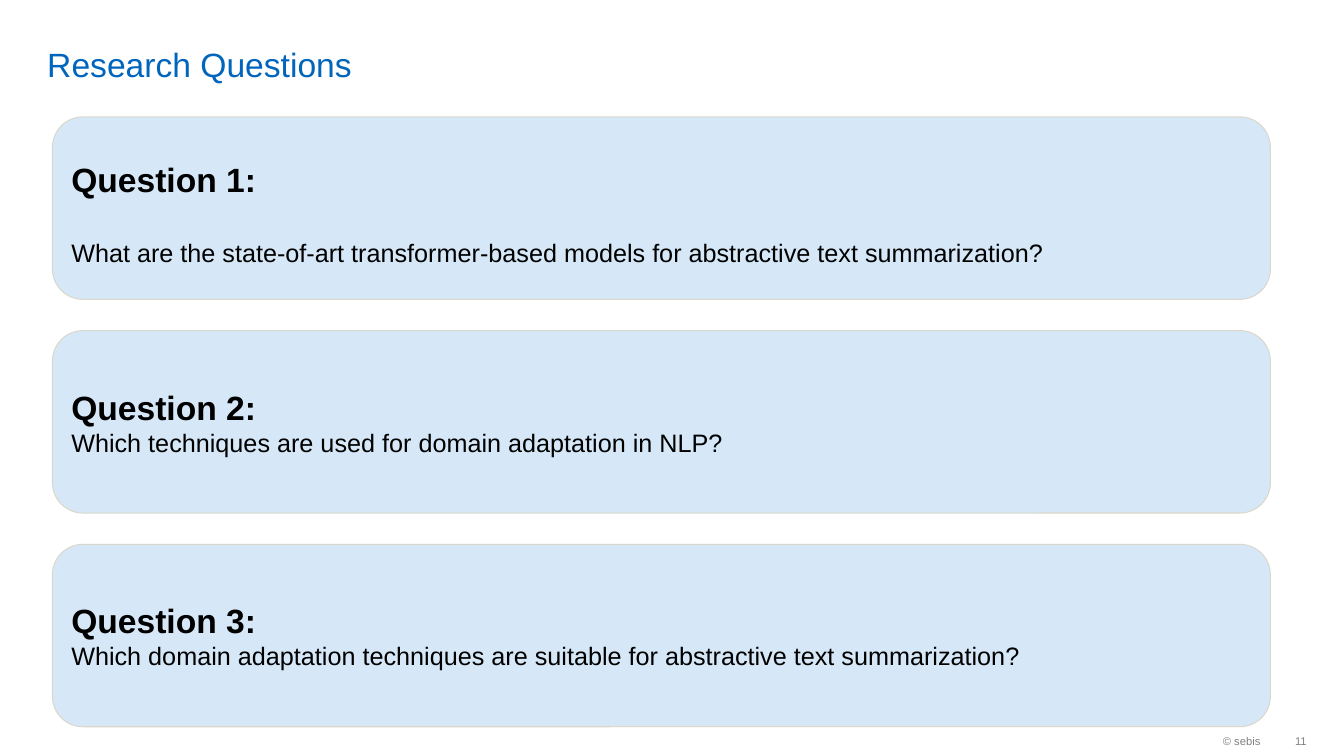
import pptx
import pptx.util
import pptx.dml.color
import pptx.enum.shapes
import pptx.enum.text

Inches = pptx.util.Inches
Pt = pptx.util.Pt
RGBColor = pptx.dml.color.RGBColor
Align = pptx.enum.text.PP_ALIGN
Anchor = pptx.enum.text.MSO_ANCHOR

BLUE = RGBColor(0x00, 0x65, 0xBD)
PALE = RGBColor(0xD6, 0xE8, 0xF7)
EDGE = RGBColor(0xDA, 0xD7, 0xCB)
BLACK = RGBColor(0, 0, 0)
GRAY = RGBColor(0x80, 0x80, 0x80)


def style(para, text, size, color, align=Align.LEFT, bold=False):
    para.text = text
    para.alignment = align
    para.font.name = "Arial"
    para.font.size = Pt(size)
    para.font.bold = bold
    para.font.color.rgb = color


def label(left, top, width, height, anchor):
    box = slide.shapes.add_textbox(
        Inches(left), Inches(top), Inches(width), Inches(height))
    frame = box.text_frame
    frame.word_wrap = True
    frame.vertical_anchor = anchor
    return frame


deck = pptx.Presentation()
deck.slide_width = Inches(13.33)
deck.slide_height = Inches(7.5)
slide = deck.slides.add_slide(deck.slide_layouts[6])

title = label(0.37, 0.05, 11.58, 0.79, Anchor.BOTTOM)
title.margin_top = title.margin_bottom = 0
style(title.paragraphs[0], "Research Questions", 24, BLUE)

questions = [
    ("What are the state-of-art transformer-based models for abstractive text summarization?", 0.15, 27.6),
    ("Which techniques are used for domain adaptation in NLP?", 0.05, 0),
    ("Which domain adaptation techniques are suitable for abstractive text summarization?", 0.05, 0),
]
for index, (question, inset, gap) in enumerate(questions):
    card = slide.shapes.add_shape(
        pptx.enum.shapes.MSO_SHAPE.ROUNDED_RECTANGLE,
        Inches(0.52), Inches(1.16 + 2.12 * index), Inches(12.08), Inches(1.81))
    card.shadow.inherit = False
    card.fill.solid()
    card.fill.fore_color.rgb = PALE
    card.line.color.rgb = EDGE
    card.line.width = Pt(0.75)
    frame = card.text_frame
    frame.word_wrap = True
    frame.vertical_anchor = Anchor.MIDDLE
    frame.margin_top = Inches(inset)
    style(frame.paragraphs[0], f"Question {index + 1}:", 24, BLACK, bold=True)
    body = frame.add_paragraph()
    body.space_before = Pt(gap)
    style(body, question, 18, BLACK)

credit = label(10.26, 7.19, 2.34, 0.32, Anchor.MIDDLE)
style(credit.paragraphs[0], "© sebis", 8, GRAY, Align.RIGHT)

number = label(12.6, 7.19, 0.36, 0.32, Anchor.MIDDLE)
number.margin_right = 0
style(number.paragraphs[0], "11", 8, GRAY, Align.RIGHT)

deck.save("out.pptx")
